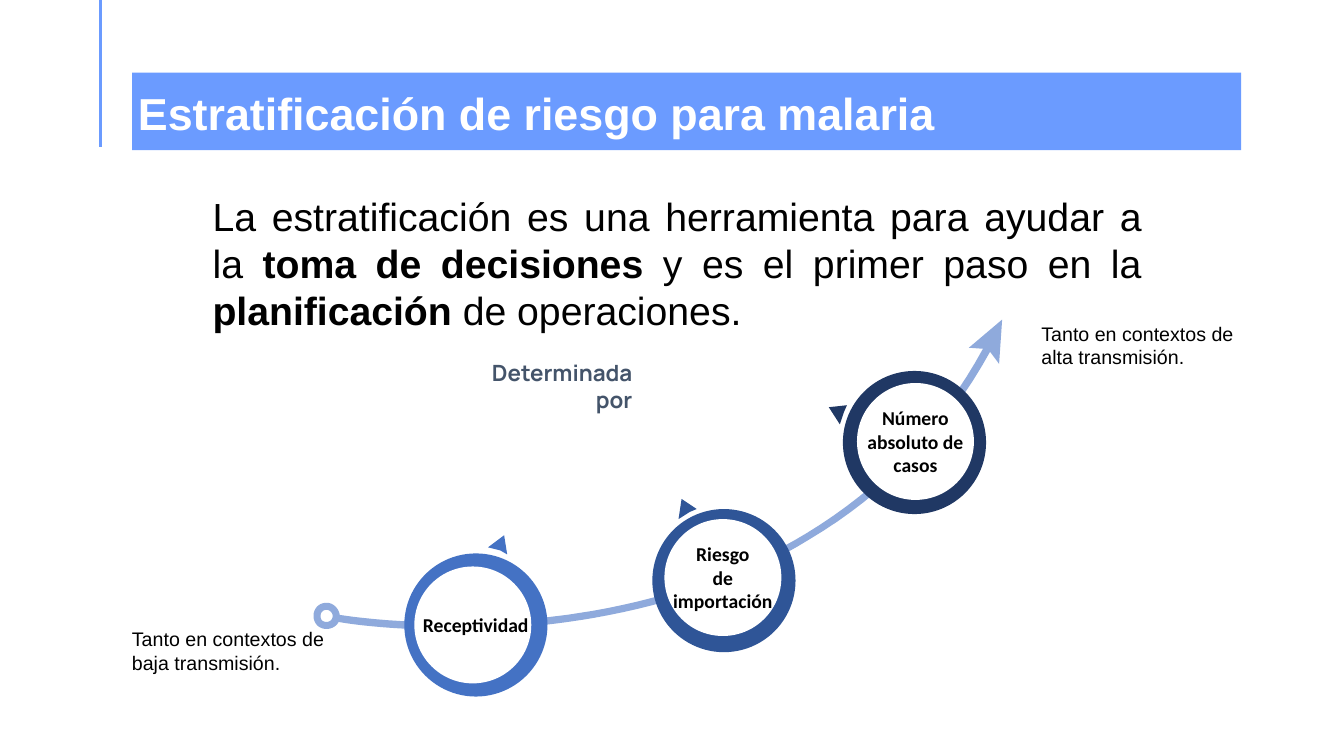
"""Build the slide on malaria risk stratification."""
import pptx
import pptx.util
import pptx.dml.color
import pptx.enum.shapes
import pptx.enum.text
import lxml.etree

Inches = pptx.util.Inches
RGBColor = pptx.dml.color.RGBColor
Align = pptx.enum.text.PP_ALIGN
Anchor = pptx.enum.text.MSO_ANCHOR

BANNER = RGBColor(0x6B, 0x9B, 0xFF)
ARROW = RGBColor(0x8F, 0xAA, 0xDC)
LIGHT_RING = RGBColor(0x44, 0x72, 0xC4)
MEDIUM_RING = RGBColor(0x2F, 0x55, 0x97)
DARK_RING = RGBColor(0x20, 0x38, 0x64)
SLATE = RGBColor(0x44, 0x54, 0x6A)
BLACK = RGBColor(0, 0, 0)
WHITE = RGBColor(0xFF, 0xFF, 0xFF)


def paint(shape, color):
    """Give a shape a plain fill without outline or shadow."""
    shape.shadow.inherit = False
    shape.fill.solid()
    shape.fill.fore_color.rgb = color
    shape.line.fill.background()


def curve(start, control_1, control_2, end, steps=16):
    """Return points along a cubic curve, without its start."""
    points = []
    for step in range(1, steps + 1):
        t = step / steps
        points.append(tuple(
            (1 - t) ** 3 * a + 3 * (1 - t) ** 2 * t * b + 3 * (1 - t) * t ** 2 * c + t ** 3 * d
            for a, b, c, d in zip(start, control_1, control_2, end)))
    return points


deck = pptx.Presentation()
deck.slide_width = Inches(13.33)
deck.slide_height = Inches(7.5)
page = deck.slides.add_slide(deck.slide_layouts[6])
shapes = page.shapes

banner = shapes.add_shape(pptx.enum.shapes.MSO_SHAPE.RECTANGLE,
                          Inches(1.31), Inches(0.72), Inches(11), Inches(0.77))
paint(banner, BANNER)

side_line = shapes.add_connector(pptx.enum.shapes.MSO_CONNECTOR.STRAIGHT,
                                 Inches(1), Inches(0), Inches(1), Inches(1.46))
side_line.line.color.rgb = BANNER
side_line.line.width = pptx.util.Pt(2.25)
lxml.etree.SubElement(side_line._element.spPr, pptx.oxml.ns.qn("a:effectLst"))

arrow_curves = [
    [(9.75, 3.46), (9.33, 4.23), (8.74, 4.84), (8, 5.29)],
    [(8, 5.29), (7.39, 5.66), (6.68, 5.92), (5.88, 6.06)],
    [(5.88, 6.06), (4.55, 6.29), (3.43, 6.11), (3.37, 6.1)],
    [(3.37, 6.1), (3.36, 6.03), (3.3, 5.98), (3.24, 5.98)],
    [(3.24, 5.98), (3.16, 5.98), (3.11, 6.04), (3.11, 6.11)],
    [(3.11, 6.11), (3.11, 6.18), (3.16, 6.24), (3.24, 6.24)],
    [(3.24, 6.24), (3.29, 6.24), (3.34, 6.21), (3.36, 6.17)],
    [(3.36, 6.17), (3.4, 6.18), (3.84, 6.25), (4.49, 6.25)],
    [(4.49, 6.25), (4.89, 6.25), (5.37, 6.22), (5.89, 6.13)],
    [(5.89, 6.13), (6.69, 5.99), (7.42, 5.73), (8.03, 5.35)],
    [(8.03, 5.35), (8.79, 4.9), (9.39, 4.27), (9.82, 3.49)],
]
hole_curves = [
    [(3.24, 6.17), (3.2, 6.17), (3.18, 6.15), (3.18, 6.11)],
    [(3.18, 6.11), (3.18, 6.08), (3.2, 6.05), (3.24, 6.05)],
    [(3.24, 6.05), (3.27, 6.05), (3.3, 6.08), (3.3, 6.11)],
    [(3.3, 6.11), (3.3, 6.15), (3.27, 6.17), (3.24, 6.17)],
]
hole = [point for piece in hole_curves for point in curve(*piece)]
arrow = [(9.94, 3.17), (9.61, 3.45), (9.75, 3.46)]
arrow += [point for piece in arrow_curves for point in curve(*piece)]
arrow.append((9.91, 3.61))

pointers = [
    ([(6.76, 4.95), (6.91, 5.05), (6.84, 5.08), (6.73, 5.15)], MEDIUM_RING),
    ([(5, 5.31), (5.03, 5.5), (4.96, 5.46), (4.84, 5.43)], LIGHT_RING),
    ([(8.22, 4.04), (8.4, 4.02), (8.37, 4.09), (8.33, 4.21)], DARK_RING),
]
outlines = [([hole, arrow], ARROW)]
outlines += [([points], color) for points, color in pointers]
for contours, color in outlines:
    builder = None
    for contour in contours:
        points = [(Inches(x), Inches(y)) for x, y in contour]
        if builder is None:
            builder = shapes.build_freeform(*points[0])
        else:
            builder.move_to(*points[0])
        builder.add_line_segments(points[1:], close=True)
    paint(builder.convert_to_shape(), color)

stages = [
    ((4.72, 6.2), (4.69, 6.2), LIGHT_RING, ["Receptividad"], 0.06),
    ((7.18, 5.76), (7.17, 5.73), MEDIUM_RING, ["Riesgo", "de", "importación"], 0),
    ((9.07, 4.39), (9.08, 4.38), DARK_RING, ["Número", "absoluto de", "casos"], 0),
]
for ring_center, disc_center, color, lines, inset in stages:
    for (x, y), radius, fill in [(ring_center, 0.71, color), (disc_center, 0.58, WHITE)]:
        disc = shapes.add_shape(pptx.enum.shapes.MSO_SHAPE.OVAL, Inches(x - radius),
                                Inches(y - radius), Inches(2 * radius), Inches(2 * radius))
        paint(disc, fill)
    frame = disc.text_frame
    frame.text = "\n".join(lines)
    frame.word_wrap = False
    frame.vertical_anchor = Anchor.MIDDLE
    frame.margin_left = Inches(inset)
    frame.margin_right = frame.margin_top = frame.margin_bottom = 0
    for para in frame.paragraphs:
        para.alignment = Align.CENTER
        para.font.name = "Calibri"
        para.font.size = pptx.util.Pt(14)
        para.font.bold = True
        para.font.color.rgb = BLACK

texts = [
    ((1.27, 0.73, 10.9, 0.77), [("Estratificación de riesgo para malaria", True)],
     "Arial", 32, WHITE, Align.LEFT, Anchor.MIDDLE),
    ((2.01, 1.86, 9.41, 1.51),
     [("La estratificación es una herramienta para ayudar a la ", False),
      ("toma de decisiones ", True), ("y es el primer paso en la ", False),
      ("planificación", True), (" de operaciones.", False)],
     "Arial", 28, BLACK, Align.JUSTIFY, Anchor.TOP),
    ((4.58, 3.52, 1.79, 0.63), [("Determinada por", True)],
     "Manrope", 16, SLATE, Align.RIGHT, Anchor.BOTTOM),
    ((10.23, 3.14, 2.41, 0.57), [("Tanto en contextos de alta transmisión.", False)],
     "Arial", 14, BLACK, Align.LEFT, Anchor.TOP),
    ((1.21, 6.17, 2.11, 0.57), [("Tanto en contextos de baja transmisión.", False)],
     "Arial", 14, BLACK, Align.LEFT, Anchor.TOP),
]
for place, spans, font, size, color, alignment, anchor in texts:
    box = shapes.add_textbox(*[Inches(length) for length in place])
    box.text_frame.word_wrap = True
    box.text_frame.vertical_anchor = anchor
    para = box.text_frame.paragraphs[0]
    para.alignment = alignment
    for words, bold in spans:
        span = para.add_run()
        span.text = words
        span.font.name = font
        span.font.size = pptx.util.Pt(size)
        span.font.bold = bold
        span.font.color.rgb = color

deck.save("out.pptx")
